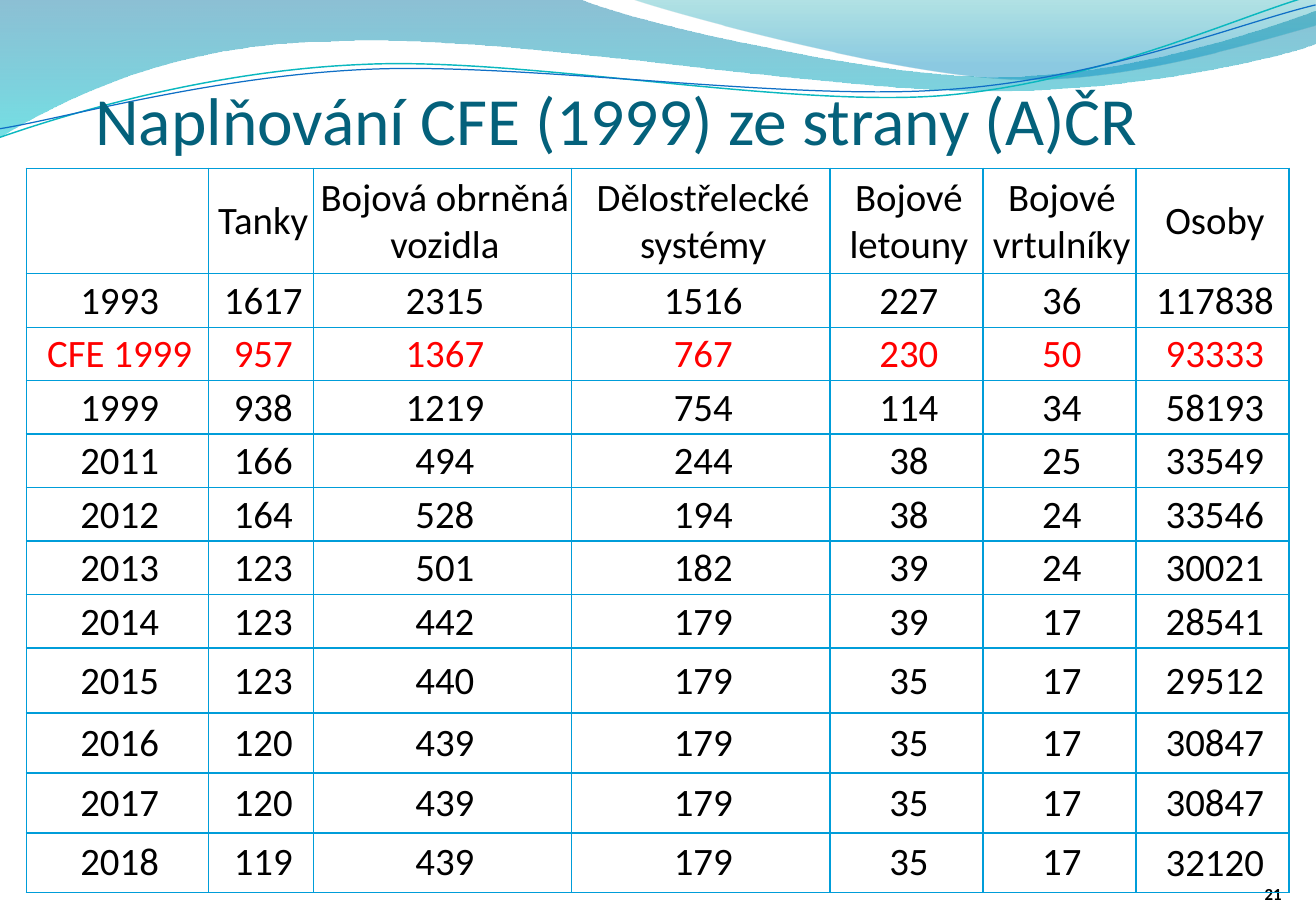
import lxml.etree
import pptx
import pptx.dml.color
import pptx.enum.text
import pptx.oxml.ns
import pptx.util

Pt = pptx.util.Pt
qn = pptx.oxml.ns.qn
ANCHOR = pptx.enum.text.MSO_ANCHOR
ALIGN = pptx.enum.text.PP_ALIGN


def rgb(value):
    return pptx.dml.color.RGBColor.from_string(value)


def add_wave(start, segments, close):
    """Draw an outline; a segment is a line (x, y) or a cubic curve (two controls, end)."""
    builder = s.shapes.build_freeform(Pt(start[0]), Pt(start[1]))
    builder.add_line_segments([(Pt(seg[-2]), Pt(seg[-1])) for seg in segments], close=close)
    sp = builder.convert_to_shape()
    sp.shadow.inherit = False
    for line, seg in zip(list(sp._element.iter(qn("a:lnTo"))), segments):
        if len(seg) == 6:
            curve = lxml.etree.Element(qn("a:cubicBezTo"))
            for x, y in zip(seg[::2], seg[1::2]):
                lxml.etree.SubElement(curve, qn("a:pt"), x=str(Pt(x) - sp.left),
                                      y=str(Pt(y) - sp.top))
            line.getparent().replace(line, curve)
    return sp


prs = pptx.Presentation()
prs.slide_width, prs.slide_height = Pt(780), Pt(540)
s = prs.slides.add_slide(prs.slide_layouts[6])

# Header bands: start, segments, gradient stops (position, colour, opacity %)
bands = [
    ((0, -0.7),
     [(343.4, -0.7), (370.8, 12.2, 517.7, 45.4, 591.8, 45.4),
      (665.3, 45.4, 747.4, 18.7, 779.8, 6.5), (780.5, 25.9),
      (766.8, 31.7, 678.2, 54.7, 581.8, 54), (485.3, 54, 298.1, 20.2, 200.9, 24.5),
      (100.8, 25.2, 36, 59.8, -0.7, 81.4)],
     [(0, "0074A1", 45), (1, "00C6CF", 55)]),
    ((373.7, -0.7),
     [(397.4, 7.9, 532.1, 44.6, 599.8, 46.8), (667.4, 49.7, 750.2, 23, 779.8, 15.1),
      (779.8, 0)],
     [(0, "00A1A9", 30), (0.8, "008BBF", 45)]),
]
for start, segments, stops in bands:
    sp = add_wave(start, segments, True)
    sp.line.fill.background()
    sp.fill.gradient()
    sp.fill.gradient_angle = 270
    for stop, (position, color, _) in zip(sp.fill.gradient_stops, stops):
        stop.position = position
        stop.color.rgb = rgb(color)
    for clr, (_, _, opacity) in zip(sp._element.spPr.iter(qn("a:srgbClr")), stops):
        lxml.etree.SubElement(clr, qn("a:alpha"), val=str(opacity * 1000))

# Thin wave lines: start, curves, colour, width
wave_lines = [
    ((0, 81.4),
     [(37.4, 68.4, 123.1, 41.8, 216, 38.2), (308.2, 33.8, 462.2, 63.4, 555.8, 56.9),
      (649.4, 49.7, 732.2, 10.1, 778.3, -2.9)], "0AB8BF", 0.85),
    ((0, 76.3),
     [(36.7, 70.6, 127.4, 44.6, 221, 41), (313.9, 37.4, 465.8, 59.8, 558.7, 53.3),
      (652.3, 47.5, 734.4, 13.7, 779.8, 2.9)], "0F6FC6", 0.75),
]
for start, curves, color, width in wave_lines:
    sp = add_wave(start, curves, False)
    sp.fill.background()
    sp.line.color.rgb = rgb(color)
    sp.line.width = Pt(width)

# Title and slide number: text, box, top inset, size, colour, bold, alignment
texts = [
    ("Naplňování CFE (1999) ze strany (A)ČR", (56.6, 37.4, 669, 57), 3.6, 40, "04617B",
     False, ALIGN.LEFT),
    ("21", (694.8, 521.5, 64.8, 14.4), 0, 10, "000000", True, ALIGN.RIGHT),
]
for text, box, inset, size, color, bold, align in texts:
    tf = s.shapes.add_textbox(*map(Pt, box)).text_frame
    tf.word_wrap = True
    tf.vertical_anchor = ANCHOR.BOTTOM
    tf.margin_left = tf.margin_right = tf.margin_bottom = 0
    tf.margin_top = Pt(inset)
    p = tf.paragraphs[0]
    p.text = text
    p.alignment = align
    p.font.name, p.font.size, p.font.bold = "Calibri", Pt(size), bold
    p.font.color.rgb = rgb(color)

rows = [
    ["", "Tanky", "Bojová obrněná vozidla", "Dělostřelecké systémy",
     "Bojové letouny", "Bojové vrtulníky", "Osoby"],
    ["1993", "1617", "2315", "1516", "227", "36", "117838"],
    ["CFE 1999", "957", "1367", "767", "230", "50", "93333"],
    ["1999", "938", "1219", "754", "114", "34", "58193"],
    ["2011", "166", "494", "244", "38", "25", "33549"],
    ["2012", "164", "528", "194", "38", "24", "33546"],
    ["2013", "123", "501", "182", "39", "24", "30021"],
    ["2014", "123", "442", "179", "39", "17", "28541"],
    ["2015", "123", "440", "179", "35", "17", "29512"],
    ["2016", "120", "439", "179", "35", "17", "30847"],
    ["2017", "120", "439", "179", "35", "17", "30847"],
    ["2018", "119", "439", "179", "35", "17", "32120"],
]
col_widths = [107.9, 62.3, 153.1, 153.1] + [90.7] * 3
row_heights = [62.5] + [31.7] * 7 + [38.6] + [35.5] * 3
table = s.shapes.add_table(len(rows), len(col_widths), Pt(15.6), Pt(99.8),
                           Pt(sum(col_widths)), Pt(sum(row_heights))).table
table.first_row = table.horz_banding = False
for column, width in zip(table.columns, col_widths):
    column.width = Pt(width)
for row, height in zip(table.rows, row_heights):
    row.height = Pt(height)

for i, values in enumerate(rows):
    for j, value in enumerate(values):
        cell = table.cell(i, j)
        tc_pr = cell._tc.get_or_add_tcPr()
        for side in ("a:lnL", "a:lnR", "a:lnT", "a:lnB"):
            ln = lxml.etree.SubElement(tc_pr, qn(side), w=str(Pt(1)))
            fill = lxml.etree.SubElement(ln, qn("a:solidFill"))
            lxml.etree.SubElement(fill, qn("a:srgbClr"), val="009DD9")
        cell.fill.background()
        if not value:
            continue
        if i < 9 or j == 6:
            cell.vertical_anchor = ANCHOR.MIDDLE
            cell.margin_left = cell.margin_right = cell.margin_top = Pt(0.7)
            cell.margin_bottom = 0
        p = cell.text_frame.paragraphs[0]
        p.text = value
        p.alignment = ALIGN.CENTER
        p.space_before = p.space_after = Pt(6)
        p._p.get_or_add_pPr().set("marL", str(Pt(2.9)))
        p.font.name, p.font.size = "Calibri", Pt(23)
        p.font.color.rgb = rgb("FF0000" if i == 2 else "000000")

prs.save("out.pptx")
